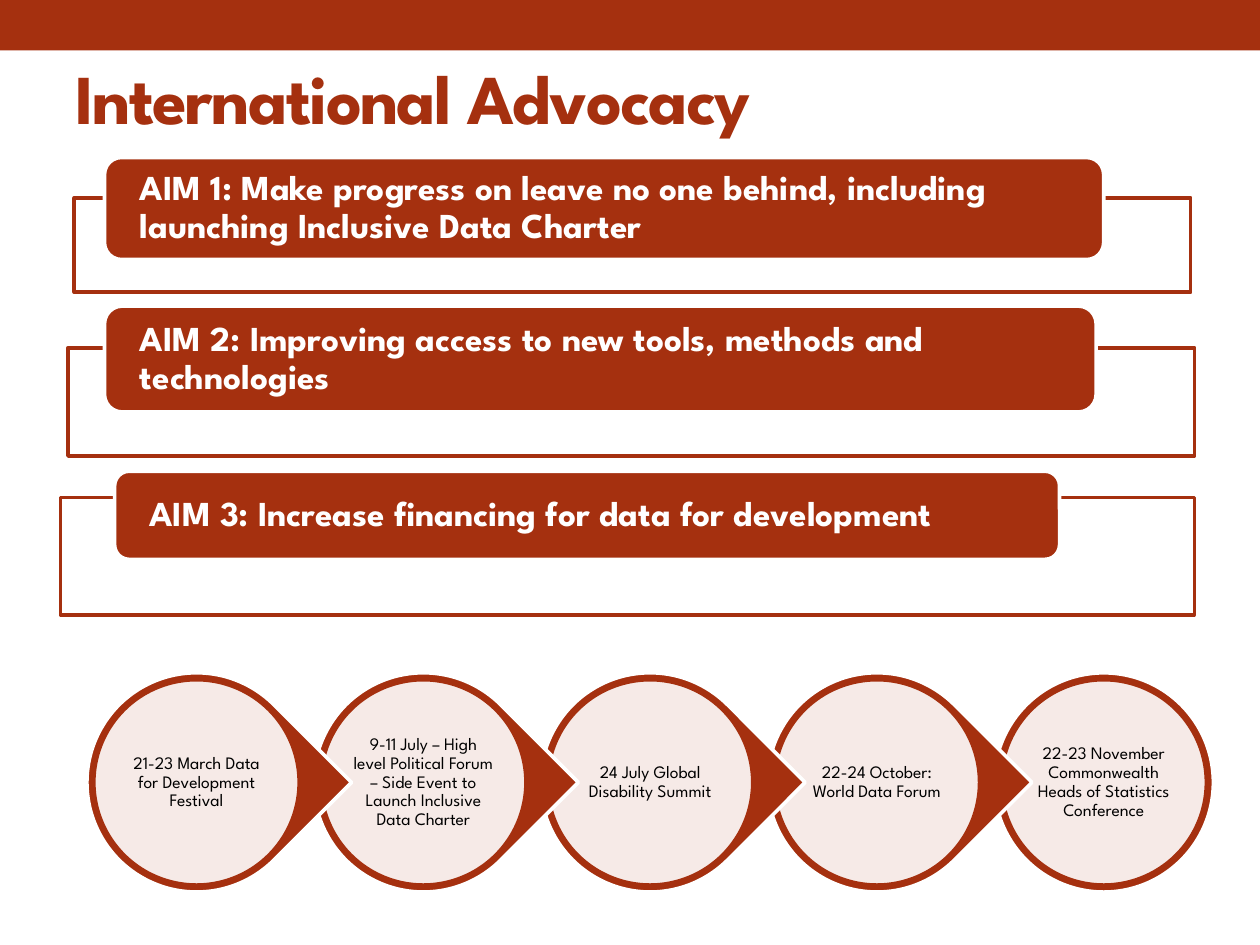
from dataclasses import dataclass

import lxml.etree
import pptx
import pptx.dml.color
import pptx.enum.shapes
import pptx.enum.text
import pptx.oxml.ns
import pptx.util

Inches = pptx.util.Inches
Pt = pptx.util.Pt
RGB = pptx.dml.color.RGBColor
MSO = pptx.enum.shapes.MSO_SHAPE
ALIGN = pptx.enum.text.PP_ALIGN
ANCHOR = pptx.enum.text.MSO_ANCHOR


@dataclass(frozen=True)
class Theme:
    font: str = "League Spartan"
    accent: RGB = RGB(0xA5, 0x30, 0x0F)
    white: RGB = RGB(0xFF, 0xFF, 0xFF)
    black: RGB = RGB(0, 0, 0)
    title: int = 40
    aim: int = 20
    event: int = 10
    line: float = 2.08
    panel_alpha: int = 90


@dataclass(frozen=True)
class Box:
    left: float
    top: float
    width: float
    height: float

    def emu(self) -> list[int]:
        return [Inches(v) for v in (self.left, self.top, self.width, self.height)]


@dataclass(frozen=True)
class Aim:
    text: str
    frame: Box
    label: Box


THEME = Theme()

AIMS = [
    Aim("AIM 1: Make progress on leave no one behind, including launching Inclusive Data Charter",
        Box(0.59, 1.57, 8.86, 0.75), Box(0.83, 1.25, 7.93, 0.81)),
    Aim("AIM 2: Improving access to new tools, methods and technologies",
        Box(0.54, 2.76, 8.94, 0.86), Box(0.83, 2.43, 7.87, 0.84)),
    Aim("AIM 3: Increase financing for data for development",
        Box(0.48, 3.95, 9, 0.93), Box(0.91, 3.74, 7.5, 0.7)),
]

EVENTS = [
    "21-23 March Data for Development Festival",
    "9-11 July – High level Political Forum – Side Event to Launch Inclusive Data Charter",
    "24 July Global Disability Summit",
    "22-24 October: World Data Forum",
    "22-23 November Commonwealth Heads of Statistics Conference",
]
EVENT_LEFT, EVENT_TOP, EVENT_STEP = 0.69, 5.34, 1.8
RING_SIZE, DISC_SIZE = 1.74, 1.63


def add_shape(s, kind, box: Box, fill: RGB, line: RGB | None = None):
    sp = s.shapes.add_shape(kind, *box.emu())
    sp.shadow.inherit = False
    sp.fill.solid()
    sp.fill.fore_color.rgb = fill
    if line is None:
        sp.line.fill.background()
    else:
        sp.line.color.rgb = line
        sp.line.width = Pt(THEME.line)
    return sp


def add_panel(s, kind, box: Box):
    sp = add_shape(s, kind, box, THEME.white, THEME.accent)
    qn = pptx.oxml.ns.qn
    color = sp.fill._xPr.find(qn("a:solidFill")).find(qn("a:srgbClr"))
    alpha = lxml.etree.SubElement(color, qn("a:alpha"))
    alpha.set("val", str(THEME.panel_alpha * 1000))
    return sp


def write(sp, text: str, size: int, color: RGB, align, bold: bool = False):
    tf = sp.text_frame
    tf.word_wrap = True
    tf.vertical_anchor = ANCHOR.MIDDLE
    p = tf.paragraphs[0]
    p.alignment = align
    r = p.add_run()
    r.text = text
    r.font.name = THEME.font
    r.font.size = Pt(size)
    r.font.bold = bold
    r.font.color.rgb = color
    return p, r


def set_margins(sp, side: float, end: float) -> None:
    tf = sp.text_frame
    tf.margin_left = tf.margin_right = Inches(side)
    tf.margin_top = tf.margin_bottom = Inches(end)


def add_title(s, text: str) -> None:
    sp = s.shapes.title
    sp.left, sp.top, sp.width, sp.height = Box(0.5, 0.3, 9, 0.93).emu()
    p, r = write(sp, text, THEME.title, THEME.accent, ALIGN.LEFT, bold=True)
    r.font._element.set("spc", "-100")


def add_aim(s, aim: Aim) -> None:
    add_panel(s, MSO.RECTANGLE, aim.frame)
    sp = add_shape(s, MSO.ROUNDED_RECTANGLE, aim.label, THEME.accent, THEME.white)
    set_margins(sp, 0.24, 0)
    p, r = write(sp, aim.text, THEME.aim, THEME.white, ALIGN.LEFT, bold=True)
    p.line_spacing = 0.9


def add_event(s, index: int, text: str) -> None:
    left = EVENT_LEFT + index * EVENT_STEP
    ring = Box(left, EVENT_TOP, RING_SIZE, RING_SIZE)
    is_last = index == len(EVENTS) - 1
    kind = MSO.OVAL if is_last else MSO.TEAR
    sp = add_shape(s, kind, ring, THEME.accent, THEME.white)
    if not is_last:
        sp.adjustments[0] = 1
        sp.rotation = 45
    inset = (RING_SIZE - DISC_SIZE) / 2
    disc = Box(left + inset, EVENT_TOP + inset, DISC_SIZE, DISC_SIZE)
    sp = add_panel(s, MSO.OVAL, disc)
    set_margins(sp, 0.01, 0.01)
    p, r = write(sp, text, THEME.event, THEME.black, ALIGN.CENTER)
    p.line_spacing = 0.9


def main() -> None:
    prs = pptx.Presentation()
    prs.slide_width, prs.slide_height = Inches(10), Inches(7.5)
    s = prs.slides.add_slide(prs.slide_layouts[5])
    add_shape(s, MSO.RECTANGLE, Box(0, 0, 10, 0.4), THEME.accent)
    add_title(s, "International Advocacy")
    for aim in AIMS:
        add_aim(s, aim)
    for index, text in reversed(list(enumerate(EVENTS))):
        add_event(s, index, text)
    prs.save("out.pptx")


if __name__ == "__main__":
    main()
